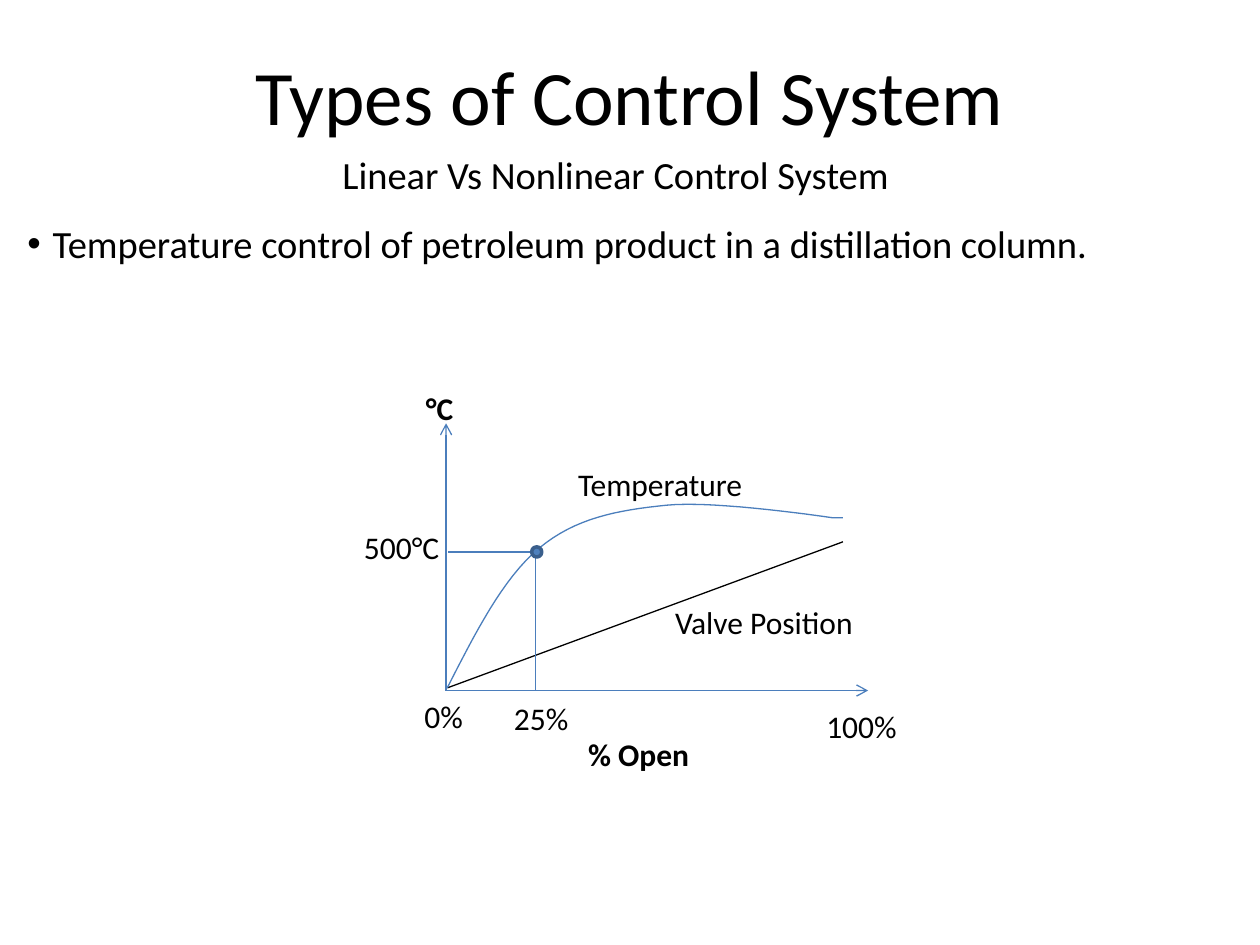
"""Build the slide on linear and nonlinear control systems."""
from dataclasses import dataclass
from typing import Optional

import pptx
import pptx.dml.color
import pptx.enum.shapes
import pptx.enum.text
import pptx.oxml.ns
import pptx.util
from lxml import etree

Pt = pptx.util.Pt
Align = pptx.enum.text.PP_ALIGN
Point = tuple[float, float]


@dataclass(frozen=True)
class Theme:
    font: str = "Calibri"
    ink: str = "000000"
    accent: str = "4B7EBC"
    marker_fill: str = "4F81BD"
    marker_edge: str = "3A5F8C"
    title_size: float = 44
    body_size: float = 22
    label_size: float = 18
    thin: float = 0.75
    thick: float = 2


THEME = Theme()


@dataclass(frozen=True)
class Label:
    text: str
    left: float
    top: float
    width: float
    height: float = 29
    size: float = THEME.label_size
    bold: bool = False
    wrap: bool = False
    align: Align = Align.LEFT
    bullet: Optional[str] = None
    inset_top: float = 3.6


@dataclass(frozen=True)
class Segment:
    start: Point
    end: Point
    color: str = THEME.accent
    arrow: bool = False


ORIGIN = (254.9, 394.6)
CURVE_START = (255.6, 393.1)
CURVE_END = (481.7, 295.9)
CURVE_ARCS = [
    ((271.4, 362.2), (287.3, 330.5), (308.2, 313.2)),
    ((329, 295.9), (352.8, 291.6), (380.9, 288.7)),
    ((409, 285.8), (475.9, 295.9), (475.9, 295.9)),
]
ARC_STEPS = 16
MARKER_CENTER = (306.7, 315.4)
MARKER_SIZE = 5.8

LABELS = [
    Label("Linear Vs Nonlinear Control System", 188.6, 82.8, 330.5, 33.8, THEME.body_size),
    Label("Types of Control System", 36, 21.6, 648, 90, THEME.title_size,
          wrap=True, align=Align.CENTER, inset_top=6),
    Label("Temperature control of petroleum product in a distillation column.",
          8.6, 122.4, 686.2, 33.8, THEME.body_size,
          wrap=True, align=Align.JUSTIFY, bullet="•"),
    Label("Temperature", 323.3, 262.1, 109.4),
    Label("Valve Position", 378.7, 341.3, 117.4),
    Label("°C", 236.2, 218.9, 30.2, bold=True),
    Label("% Open", 329, 416.2, 72.7, bold=True),
    Label("0%", 235.4, 394.6, 36.7),
    Label("100%", 465.1, 400.3, 55.4),
    Label("500°C", 200.9, 298.1, 58.3, 51.1),
    Label("25%", 286.6, 396, 46.1),
]

SEGMENTS = [
    Segment(ORIGIN, (496.1, ORIGIN[1]), arrow=True),
    Segment(ORIGIN, (ORIGIN[0], 241.9), arrow=True),
    Segment(CURVE_START, (CURVE_END[0], 309.6), color=THEME.ink),
    Segment(MARKER_CENTER, (256.3, MARKER_CENTER[1])),
    Segment((306, 313.2), (306, ORIGIN[1])),
]


def rgb(color: str) -> pptx.dml.color.RGBColor:
    """Turn a hex string into a colour."""
    return pptx.dml.color.RGBColor.from_string(color)


def add_element(parent, tag: str, **attributes: str) -> None:
    """Append a DrawingML element."""
    etree.SubElement(parent, pptx.oxml.ns.qn(tag), attributes)


def style_line(line, color: str, width: float) -> None:
    """Give a line its colour and width."""
    line.color.rgb = rgb(color)
    line.width = Pt(width)


def draw_label(slide, label: Label) -> None:
    """Draw one text box."""
    box = slide.shapes.add_textbox(
        Pt(label.left), Pt(label.top), Pt(label.width), Pt(label.height))
    frame = box.text_frame
    frame.word_wrap = label.wrap
    frame.margin_top = Pt(label.inset_top)
    paragraph = frame.paragraphs[0]
    paragraph.alignment = label.align
    if label.bullet:
        properties = paragraph._p.get_or_add_pPr()
        properties.set("marL", str(Pt(14.4)))
        properties.set("indent", str(Pt(-14.4)))
        add_element(properties, "a:buFont", typeface="Arial")
        add_element(properties, "a:buChar", char=label.bullet)
    run = paragraph.add_run()
    run.text = label.text
    run.font.name = THEME.font
    run.font.size = Pt(label.size)
    run.font.bold = label.bold
    run.font.color.rgb = rgb(THEME.ink)


def draw_segment(slide, segment: Segment) -> None:
    """Draw one straight line or axis."""
    connector = slide.shapes.add_connector(
        pptx.enum.shapes.MSO_CONNECTOR.STRAIGHT,
        *(Pt(value) for value in segment.start + segment.end))
    style_line(connector.line, segment.color, THEME.thin)
    if segment.arrow:
        add_element(connector.line._get_or_add_ln(), "a:tailEnd", type="arrow")
    add_element(connector._element.spPr, "a:effectLst")


def bezier(p0: Point, p1: Point, p2: Point, p3: Point, t: float) -> Point:
    """Return the point at t on a cubic curve."""
    u = 1 - t
    x, y = (u**3 * a + 3 * u * u * t * b + 3 * u * t * t * c + t**3 * d
            for a, b, c, d in zip(p0, p1, p2, p3))
    return x, y


def draw_temperature_curve(slide) -> None:
    """Draw the temperature response."""
    points = [CURVE_START]
    for arc in CURVE_ARCS:
        start = points[-1]
        points += [bezier(start, *arc, step / ARC_STEPS)
                   for step in range(1, ARC_STEPS + 1)]
    points.append(CURVE_END)
    vertices = [(Pt(x), Pt(y)) for x, y in points]
    builder = slide.shapes.build_freeform(*vertices[0])
    builder.add_line_segments(vertices[1:], close=False)
    curve = builder.convert_to_shape()
    curve.shadow.inherit = False
    curve.fill.background()
    style_line(curve.line, THEME.accent, THEME.thin)


def draw_marker(slide) -> None:
    """Draw the operating point."""
    left, top = (Pt(value - MARKER_SIZE / 2) for value in MARKER_CENTER)
    marker = slide.shapes.add_shape(
        pptx.enum.shapes.MSO_SHAPE.OVAL, left, top, Pt(MARKER_SIZE), Pt(MARKER_SIZE))
    marker.shadow.inherit = False
    marker.fill.solid()
    marker.fill.fore_color.rgb = rgb(THEME.marker_fill)
    style_line(marker.line, THEME.marker_edge, THEME.thick)


def main() -> None:
    """Build and save the slide."""
    deck = pptx.Presentation()
    deck.slide_width, deck.slide_height = Pt(720), Pt(540)
    slide = deck.slides.add_slide(deck.slide_layouts[6])
    for label in LABELS:
        draw_label(slide, label)
    for segment in SEGMENTS:
        draw_segment(slide, segment)
    draw_temperature_curve(slide)
    draw_marker(slide)
    deck.save("out.pptx")


if __name__ == "__main__":
    main()
